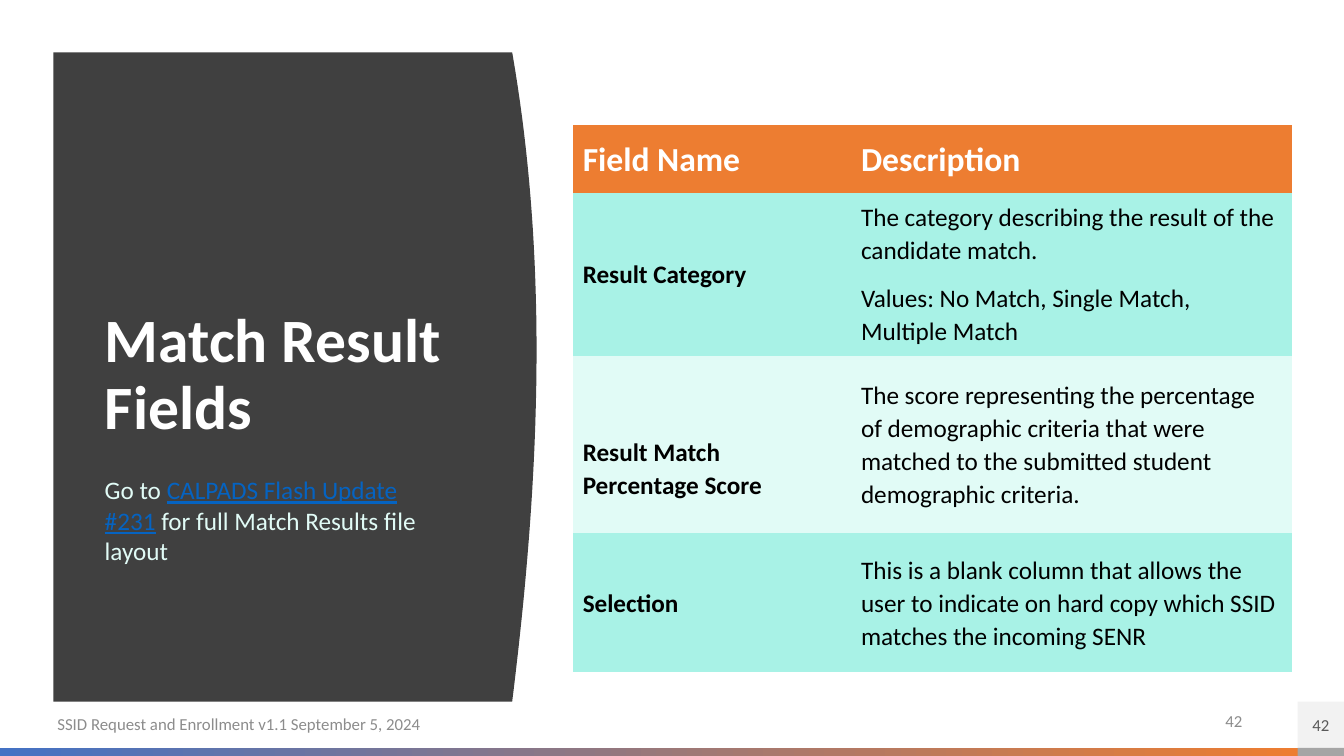
import pptx
import pptx.util
import pptx.dml.color
import pptx.enum.shapes
import pptx.enum.text
import lxml.etree

ALIGN = pptx.enum.text.PP_ALIGN
MIDDLE = pptx.enum.text.MSO_ANCHOR.MIDDLE
TOP = pptx.enum.text.MSO_ANCHOR.TOP

COLOURS = {
    "panel": "404040", "white": "FFFFFF", "black": "000000",
    "header": "ED7D31", "band": "A8F2E6", "light_band": "E1FBF6",
    "link": "0563C1", "blue": "4472C4", "grey": "A5A5A5",
    "tile": "F2F2F2", "tile_text": "595959", "footer": "8C8C8C",
}
NO_GRID_STYLE = "{2D5ABB26-0587-4C30-8999-92F81FD0307C}"
FIELDS = [
    (["Field Name"], ["Description"]),
    (["Result Category"],
     ["The category describing the result of the candidate match.",
      "Values: No Match, Single Match, Multiple Match"]),
    (["Result Match Percentage Score"],
     ["The score representing the percentage of demographic criteria that "
      "were matched to the submitted student demographic criteria."]),
    (["Selection"],
     ["This is a blank column that allows the user to indicate on hard copy "
      "which SSID matches the incoming SENR"]),
]


def px(length):
    """Turn px, 100 to the inch, into EMU."""
    return pptx.util.Emu(round(length * 9144))


def colour(name):
    return pptx.dml.color.RGBColor.from_string(COLOURS[name])


class SlideBuilder:
    font_name = "Calibri"

    def __init__(self, page):
        self.page = page

    def style_run(self, run, size, ink, bold=False, underline=False):
        font = run.font
        font.name = self.font_name
        font.size = pptx.util.Pt(size)
        font.bold = bold
        font.underline = underline
        font.color.rgb = colour(ink)

    def title(self, text, box):
        title = self.page.shapes.title
        title.left, title.top, title.width, title.height = map(px, box)
        # The title has to lie in front of the panel.
        title._element.getparent().append(title._element)
        frame = title.text_frame
        frame.text = text
        frame.word_wrap = True
        frame.auto_size = pptx.enum.text.MSO_AUTO_SIZE.NONE
        frame.vertical_anchor = MIDDLE
        para = frame.paragraphs[0]
        para.alignment = ALIGN.LEFT
        para.line_spacing = 0.9
        self.style_run(para.runs[0], 44, "white", bold=True)

    def text(self, spans, box, size, align=ALIGN.LEFT, anchor=MIDDLE):
        """Add a text box; spans are (text, colour, underline)."""
        frame = self.page.shapes.add_textbox(*map(px, box)).text_frame
        frame.word_wrap = True
        frame.vertical_anchor = anchor
        para = frame.paragraphs[0]
        para.alignment = align
        for words, ink, underline in spans:
            span = para.add_run()
            span.text = words
            self.style_run(span, size, ink, underline=underline)

    def rectangle(self, box, fill, fade_to=None):
        shape = self.page.shapes.add_shape(
            pptx.enum.shapes.MSO_SHAPE.RECTANGLE, *map(px, box))
        shape.shadow.inherit = False
        shape.line.fill.background()
        if fade_to:
            shape.fill.gradient()
            shape.fill.gradient_angle = 0
            for stop, name, position in zip(
                    shape.fill.gradient_stops, (fill, fade_to), (0, 1)):
                stop.color.rgb = colour(name)
                stop.position = position
        else:
            shape.fill.solid()
            shape.fill.fore_color.rgb = colour(fill)
        return shape

    def number_tile(self, number, box):
        frame = self.rectangle(box, "tile").text_frame
        frame.margin_left = frame.margin_right = 0
        frame.margin_top = frame.margin_bottom = 0
        frame.vertical_anchor = MIDDLE
        frame.text = number
        para = frame.paragraphs[0]
        para.alignment = ALIGN.CENTER
        self.style_run(para.runs[0], 12, "tile_text")

    def curved_panel(self, left, top, right, bottom, bulge, skew):
        """Add a panel whose right side swells by bulge, a little more at the top."""
        steps = 40
        edge = []
        for step in range(steps + 1):
            t = 2 * step / steps - 1
            x = right + bulge * (1 - t * t) - skew * t * (1 - t * t)
            edge.append((px(x), px(top + (bottom - top) * step / steps)))
        builder = self.page.shapes.build_freeform(px(left), px(top), scale=1.0)
        builder.add_line_segments(edge + [(px(left), px(bottom))], close=True)
        panel = builder.convert_to_shape()
        panel.shadow.inherit = False
        panel.fill.solid()
        panel.fill.fore_color.rgb = colour("panel")
        panel.line.fill.background()

    def table(self, rows, left, top, widths, heights):
        frame = self.page.shapes.add_table(
            len(rows), len(widths), px(left), px(top),
            px(sum(widths)), px(sum(heights)))
        for style in frame._element.iter("{*}tableStyleId"):
            style.text = NO_GRID_STYLE
        table = frame.table
        for column, width in zip(table.columns, widths):
            column.width = px(width)
        for row, height in zip(table.rows, heights):
            row.height = px(height)
        for i, row in enumerate(rows):
            fill = "header" if i == 0 else ("light_band", "band")[i % 2]
            for j, paragraphs in enumerate(row):
                self.fill_cell(table.cell(i, j), paragraphs, fill,
                               header=i == 0, bold=i == 0 or j == 0)
        return table

    def fill_cell(self, cell, paragraphs, fill, header, bold):
        cell.fill.solid()
        cell.fill.fore_color.rgb = colour(fill)
        cell.vertical_anchor = MIDDLE
        cell.margin_left = cell.margin_right = px(10)
        cell.margin_top = cell.margin_bottom = 0
        cell.text_frame.text = "\n".join(paragraphs)
        for k, para in enumerate(cell.text_frame.paragraphs):
            para.line_spacing = 1.07
            para.space_before = pptx.util.Pt(3 if k else 0)
            para.space_after = pptx.util.Pt(8)
            self.style_run(para.runs[0], 24 if header else 18,
                           "white" if header else "black", bold=bold)


def main():
    deck = pptx.Presentation()
    deck.slide_width, deck.slide_height = px(1333), px(750)
    slide = SlideBuilder(deck.slides.add_slide(deck.slide_layouts[5]))

    slide.curved_panel(53, 52, 508, 696, bulge=24, skew=4)
    fields = slide.table(FIELDS, 568, 124, (276, 437), (67, 162, 176, 138))
    fields.cell(2, 0).margin_top = px(48)
    slide.title("Match Result Fields", (94, 111, 374, 524))
    slide.text([("Go to ", "light_band", False),
                ("CALPADS Flash Update #231", "link", True),
                (" for full Match Results file layout", "light_band", False)],
               (94, 466, 339, 101), 18, anchor=TOP)

    slide.number_tile("42", (1287, 696, 46, 46))
    slide.rectangle((0, 742, 1287, 8), "blue", fade_to="header")
    slide.rectangle((1287, 742, 46, 8), "grey")
    slide.text([("42", "footer", False)], (942, 695, 300, 40), 12, ALIGN.RIGHT)
    slide.text([("SSID Request and Enrollment v1.1 September 5, 2024", "footer", False)],
               (47, 696, 598, 45), 12)
    deck.save("out.pptx")


if __name__ == "__main__":
    main()
